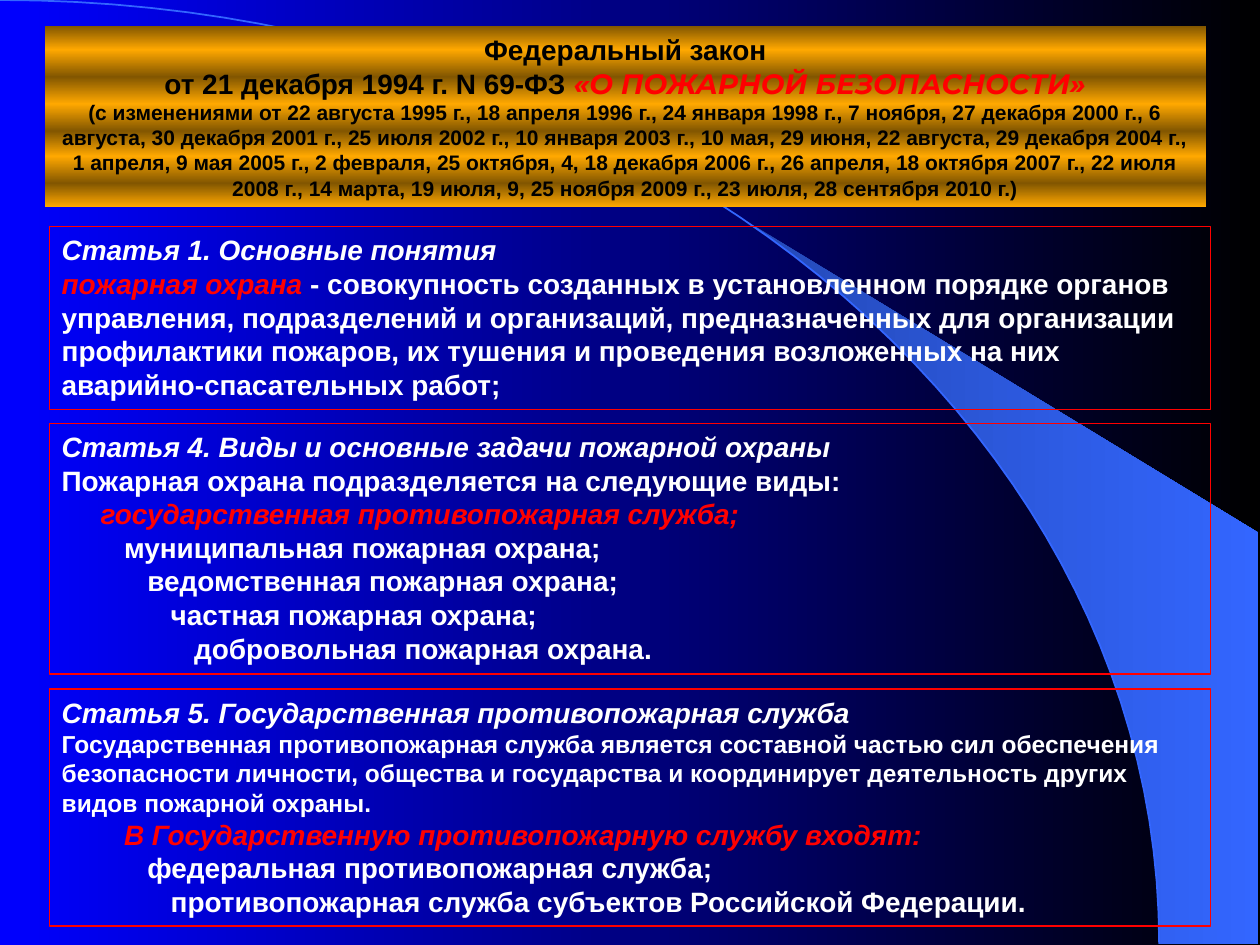
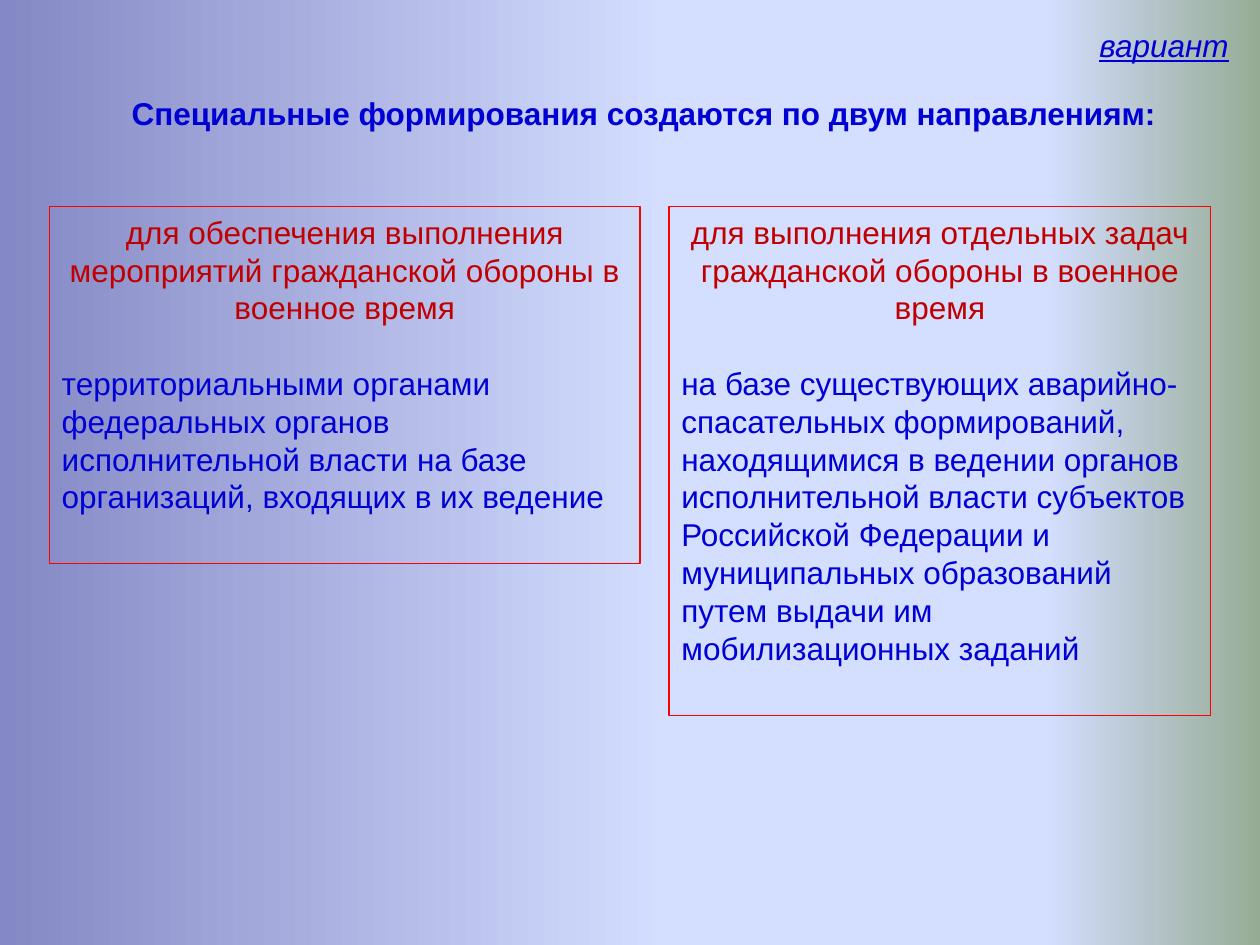
from pptx import Presentation
from pptx.dml.color import RGBColor
from pptx.enum.shapes import MSO_SHAPE
from pptx.enum.text import MSO_ANCHOR, PP_ALIGN
from pptx.oxml import parse_xml
from pptx.oxml.ns import nsdecls, qn
from pptx.util import Pt

RECTANGLE = MSO_SHAPE.RECTANGLE
TOP = MSO_ANCHOR.TOP
LEFT, CENTER, RIGHT = PP_ALIGN.LEFT, PP_ALIGN.CENTER, PP_ALIGN.RIGHT

FONT, ACCENT_FONT = "Arial", "Montserrat"
WHITE, BLACK, RED = "FFFFFF", "000000", "FF0000"
DARK_RED, TEXT_BLUE, ARC_BLUE = "C00000", "0000D5", "3366FF"

LAW_BACKGROUND = [(0, "0000FF"), (100, BLACK)]
FORMATIONS_BACKGROUND = [(0, "8488C4"), (53, "D4DEFF"), (83, "D4DEFF"), (100, "96AB94")]
SWEEP_GRADIENT = [(0, "2449B6"), (100, ARC_BLUE)]
GOLD_GRADIENT = [(position, ("825600", "FFA800")[i % 2])
                 for i, position in enumerate((0, 13, 28, 43, 58, 72, 87, 100))]

BOX_LEFT, BOX_RIGHT = 28.2, 691.9
INDENT_STEP = 4.45

# A paragraph is (runs, options); a run is (text, style).
PLAIN = dict(size=16, color=WHITE, bold=True)
HEADING = dict(PLAIN, italic=True)
KEY_TERM = dict(HEADING, color=RED)
LAW_TITLE = dict(PLAIN, color=BLACK)

LAW_HEADER = [
    ([("Федеральный закон", LAW_TITLE)], {}),
    ([("от 21 декабря 1994 г. N 69-ФЗ ", LAW_TITLE),
      ("«О ПОЖАРНОЙ БЕЗОПАСНОСТИ»", dict(KEY_TERM, font=ACCENT_FONT))], {}),
    ([("(с изменениями от 22 августа 1995 г., 18 апреля 1996 г., 24 января 1998 г., "
       "7 ноября, 27 декабря 2000 г., 6 августа, 30 декабря 2001 г., 25 июля 2002 г., "
       "10 января 2003 г., 10 мая, 29 июня, 22 августа, 29 декабря 2004 г., 1 апреля, "
       "9 мая 2005 г., 2 февраля, 25 октября, 4, 18 декабря 2006 г., 26 апреля, "
       "18 октября 2007 г., 22 июля 2008 г., 14 марта, 19 июля, 9, 25 ноября 2009 г., "
       "23 июля, 28 сентября 2010 г.)", dict(LAW_TITLE, size=12))], {}),
]

# (top, height, paragraphs)
ARTICLES = [
    (129.6, 104.4, [
        ([("Статья 1. Основные понятия", HEADING)], {}),
        ([("пожарная охрана ", KEY_TERM),
          ("- совокупность созданных в установленном порядке органов управления, "
           "подразделений и организаций, предназначенных для организации профилактики "
           "пожаров, их тушения и проведения возложенных на них аварийно-спасательных "
           "работ;", PLAIN)], {}),
    ]),
    (241.9, 143.3, [
        ([("Статья 4. Виды и основные задачи пожарной охраны", HEADING)], {}),
        ([("Пожарная охрана подразделяется на следующие виды:", PLAIN)], {}),
        ([("государственная противопожарная служба;", KEY_TERM)], dict(indent=5)),
        ([("муниципальная пожарная охрана;", PLAIN)], dict(indent=8)),
        ([("ведомственная пожарная охрана;", PLAIN)], dict(indent=11)),
        ([("частная пожарная охрана;", PLAIN)], dict(indent=14)),
        ([("добровольная пожарная охрана.", PLAIN)], dict(indent=17)),
    ]),
    (393.8, 135.4, [
        ([("Статья 5. Государственная противопожарная служба", HEADING)], {}),
        ([("Государственная противопожарная служба является составной частью сил "
           "обеспечения безопасности личности, общества и государства и координирует "
           "деятельность других видов пожарной охраны.", dict(PLAIN, size=14))], {}),
        ([("В Государственную противопожарную службу входят:", KEY_TERM)], dict(indent=8)),
        ([("федеральная противопожарная служба;", PLAIN)], dict(indent=11)),
        ([("противопожарная служба субъектов Российской Федерации.", PLAIN)],
         dict(indent=14)),
    ]),
]

BODY = dict(size=18, color=TEXT_BLUE)
PURPOSE = dict(BODY, color=DARK_RED)
VARIANT = [([("вариант", dict(BODY, italic=True, underline=True))], {})]
FORMATIONS_TITLE = [([("Специальные формирования создаются по двум направлениям:",
                       dict(BODY, bold=True))], {})]

# (left, right, height, purpose, who creates the formations)
DIRECTIONS = [
    (BOX_LEFT, 365.8, 203.8,
     "для обеспечения выполнения мероприятий гражданской обороны в военное время",
     "территориальными органами федеральных органов исполнительной власти на базе "
     "организаций, входящих в их ведение"),
    (382.3, BOX_RIGHT, 290.9,
     "для выполнения отдельных задач гражданской обороны в военное время",
     "на базе существующих аварийно-спасательных формирований, находящимися в ведении "
     "органов исполнительной власти субъектов Российской Федерации и муниципальных "
     "образований путем выдачи им мобилизационных заданий"),
]
DIRECTIONS_TOP = 118.1
BLANK_LINE = 21.6

ARC_CONTROLS = [(0, 0), (365.8, 0), (662.4, 241.2), (662.4, 539.3)]
ARC_STEPS = 50
SWEEP_START = 22
SWEEP_CORNERS = [(719.3, 539.3), (719.3, 304.6)]


def rgb(color):
    return RGBColor.from_string(color)


def set_gradient(fill, owner, stops, angle=0):
    """Fill with any number of stops; owner is the XML element holding the fill."""
    fill.gradient()
    fill.gradient_angle = angle
    stop_list = owner.find(".//" + qn("a:gsLst"))
    for old_stop in list(stop_list):
        stop_list.remove(old_stop)
    for position, color in stops:
        stop_list.append(parse_xml(
            f'<a:gs {nsdecls("a")} pos="{position * 1000}"><a:srgbClr val="{color}"/></a:gs>'))


def write(shape, paragraphs, align=LEFT):
    frame = shape.text_frame
    frame.word_wrap = True
    frame.vertical_anchor = TOP
    for i, (runs, options) in enumerate(paragraphs):
        paragraph = frame.paragraphs[0] if i == 0 else frame.add_paragraph()
        paragraph.alignment = options.get("align", align)
        if "before" in options:
            paragraph.space_before = Pt(options["before"])
        if "indent" in options:
            properties = paragraph._p.get_or_add_pPr()
            properties.set("marL", str(Pt(options["indent"] * INDENT_STEP)))
            properties.set("indent", "0")
        for text, style in runs:
            run = paragraph.add_run()
            run.text = text
            font = run.font
            font.name = style.get("font", FONT)
            font.size = Pt(style["size"])
            font.color.rgb = rgb(style["color"])
            font.bold = style.get("bold", False)
            font.italic = style.get("italic", False)
            font.underline = style.get("underline", False)


def add_box(slide, left, top, width, height, paragraphs, align=LEFT, gradient=None):
    """A red-outlined box, or a borderless one when a gradient is given."""
    box = slide.shapes.add_shape(RECTANGLE, Pt(left), Pt(top), Pt(width), Pt(height))
    box.shadow.inherit = False
    if gradient:
        set_gradient(box.fill, box._element.spPr, gradient, 270)
        box.line.fill.background()
    else:
        box.fill.background()
        box.line.color.rgb = rgb(RED)
        box.line.width = Pt(0.75)
    write(box, paragraphs, align)


def add_label(slide, left, top, width, height, paragraphs, align):
    label = slide.shapes.add_textbox(Pt(left), Pt(top), Pt(width), Pt(height))
    write(label, paragraphs, align)


def arc_point(t):
    weights = ((1 - t) ** 3, 3 * (1 - t) ** 2 * t, 3 * (1 - t) * t ** 2, t ** 3)
    return tuple(sum(w * point[axis] for w, point in zip(weights, ARC_CONTROLS))
                 for axis in (0, 1))


def add_outline(slide, points, close):
    corners = [(Pt(x), Pt(y)) for x, y in points]
    builder = slide.shapes.build_freeform(*corners[0])
    builder.add_line_segments(corners[1:], close=close)
    outline = builder.convert_to_shape()
    outline.shadow.inherit = False
    return outline


def add_arc_backdrop(slide):
    arc_points = [arc_point(i / ARC_STEPS) for i in range(ARC_STEPS + 1)]
    sweep = add_outline(slide, arc_points[SWEEP_START:] + SWEEP_CORNERS, True)
    set_gradient(sweep.fill, sweep._element.spPr, SWEEP_GRADIENT)
    sweep.line.fill.background()
    arc = add_outline(slide, arc_points, False)
    arc.fill.background()
    arc.line.color.rgb = rgb(ARC_BLUE)
    arc.line.width = Pt(1)


def new_slide(deck, background):
    slide = deck.slides.add_slide(deck.slide_layouts[6])
    set_gradient(slide.background.fill, slide._element, background)
    return slide


def build_law(deck):
    slide = new_slide(deck, LAW_BACKGROUND)
    add_arc_backdrop(slide)
    width = BOX_RIGHT - BOX_LEFT
    add_box(slide, 25.5, 15, width, 103.2, LAW_HEADER, CENTER, GOLD_GRADIENT)
    for top, height, paragraphs in ARTICLES:
        add_box(slide, BOX_LEFT, top, width, height, paragraphs)


def build_formations(deck):
    slide = new_slide(deck, FORMATIONS_BACKGROUND)
    add_label(slide, 523.4, 11.5, 185.8, 28.8, VARIANT, RIGHT)
    add_label(slide, 44.6, 50.4, 646.6, 28.8, FORMATIONS_TITLE, CENTER)
    for left, right, height, purpose, creators in DIRECTIONS:
        add_box(slide, left, DIRECTIONS_TOP, right - left, height, [
            ([(purpose, PURPOSE)], dict(align=CENTER)),
            ([(creators, BODY)], dict(before=BLANK_LINE)),
        ])


def main():
    deck = Presentation()
    deck.slide_width, deck.slide_height = Pt(720), Pt(540)
    build_law(deck)
    build_formations(deck)
    deck.save("out.pptx")


if __name__ == "__main__":
    main()
